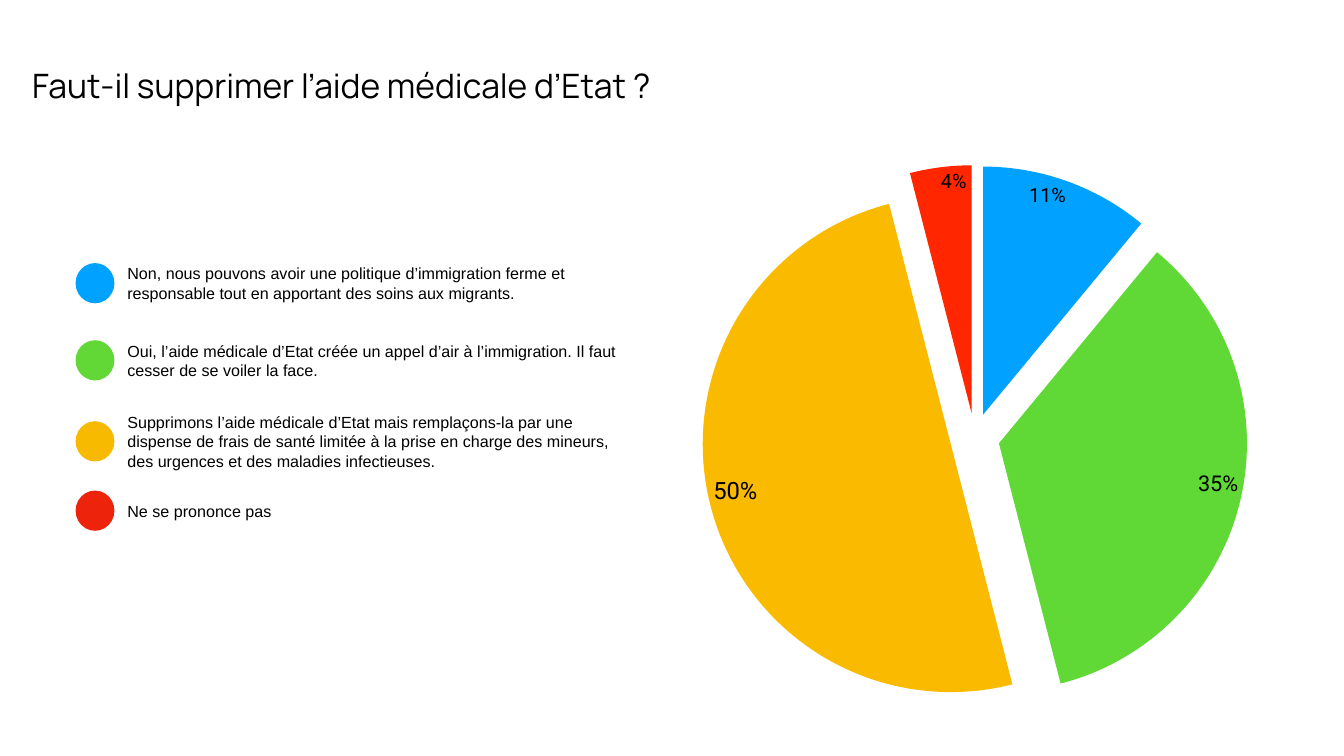
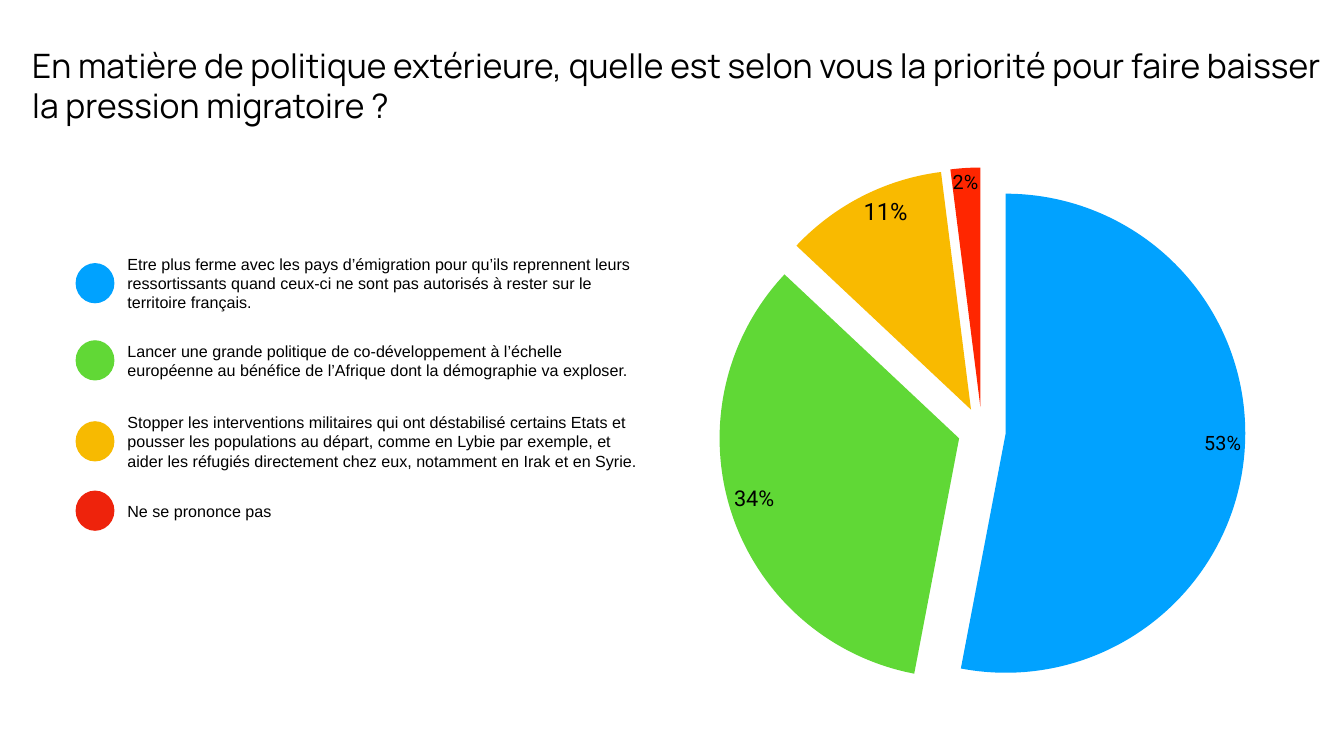
import copy

import pptx
import pptx.chart.data
import pptx.dml.color
import pptx.enum.chart
import pptx.enum.shapes
import pptx.enum.text
import pptx.oxml
import pptx.oxml.ns
import pptx.util

Pt = pptx.util.Pt
qn = pptx.oxml.ns.qn

COLOURS = {
    "text": "000000",
    "paper": "FFFFFF",
    "slices": ["01A2FF", "60D836", "F9BA00", "FF2600"],
    "dots": ["00A2FF", "61D836", "F7BA01", "EE230C"],
}
TITLE = {"name": "Manrope", "size": Pt(48)}
ANSWER = {"name": "Arial", "size": Pt(23)}
CHART_TEXT = {"name": "Arial", "size": Pt(10)}
LABEL_SIZES = [28.2, 31, 34, 28.2]
LABEL_SETTINGS = {
    "show_percentage": True,
    "show_value": False,
    "number_format": "#,##0%",
    "number_format_is_linked": False,
    "position": pptx.enum.chart.XL_LABEL_POSITION.INSIDE_END,
}
FRAME = {
    "word_wrap": True,
    "auto_size": pptx.enum.text.MSO_AUTO_SIZE.SHAPE_TO_FIT_TEXT,
    "vertical_anchor": pptx.enum.text.MSO_ANCHOR.MIDDLE,
    "margin_left": Pt(4),
    "margin_right": Pt(4),
    "margin_top": Pt(4),
    "margin_bottom": Pt(4),
}
ROW_CENTRES = [404.6, 514.8, 630.5, 729.6]
LINE_HEIGHT = 28
PLOT_LAYOUT = {"x": 0.005, "y": 0.005, "w": 0.99, "h": 0.988}

POLLS = [
    {
        "title": "Faut-il supprimer l’aide médicale d’Etat ?",
        "title_size": (1016, 75),
        "pie": (974, 232, 837, 789),
        "shares": [11, 35, 50, 4],
        "answers": [
            (2, "Non, nous pouvons avoir une politique d’immigration ferme et responsable "
                "tout en apportant des soins aux migrants."),
            (2, "Oui, l’aide médicale d’Etat créée un appel d’air à l’immigration. "
                "Il faut cesser de se voiler la face."),
            (3, "Supprimons l’aide médicale d’Etat mais remplaçons-la par une dispense de "
                "frais de santé limitée à la prise en charge des mineurs, des urgences et "
                "des maladies infectieuses."),
            (1, "Ne se prononce pas"),
        ],
    },
    {
        "title": "En matière de politique extérieure, quelle est selon vous la priorité "
                 "pour faire baisser la pression migratoire ?",
        "title_size": (1878, 147),
        "pie": (996, 235.5, 813.5, 762),
        "shares": [53, 34, 11, 2],
        "answers": [
            (3, "Etre plus ferme avec les pays d’émigration pour qu’ils reprennent leurs "
                "ressortissants quand ceux-ci ne sont pas autorisés à rester sur le "
                "territoire français."),
            (2, "Lancer une grande politique de co-développement à l’échelle européenne au "
                "bénéfice de l’Afrique dont la démographie va exploser."),
            (3, "Stopper les interventions militaires qui ont déstabilisé certains Etats et "
                "pousser les populations au départ, comme en Lybie par exemple, et aider les "
                "réfugiés directement chez eux, notamment en Irak et en Syrie."),
            (1, "Ne se prononce pas"),
        ],
    },
]


def apply(target, settings):
    for name, value in settings.items():
        setattr(target, name, value)


def chart_element(tag, **attributes):
    element = pptx.oxml.parse_xml(f"<c:{tag} {pptx.oxml.ns.nsdecls('c')}/>")
    for name, value in attributes.items():
        element.set(name, str(value))
    return element


class PollDeck:
    def __init__(self):
        self.deck = pptx.Presentation()
        apply(self.deck, {"slide_width": Pt(1920), "slide_height": Pt(1080)})
        self.page = None

    def add_page(self):
        self.page = self.deck.slides.add_slide(self.deck.slide_layouts[6])
        self.fill(self.page.background, COLOURS["paper"])

    def fill(self, target, colour):
        target.fill.solid()
        target.fill.fore_color.rgb = pptx.dml.color.RGBColor.from_string(colour)

    def font(self, font, style):
        apply(font, style)
        font.color.rgb = pptx.dml.color.RGBColor.from_string(COLOURS["text"])

    def text(self, words, left, centre, width, height, style):
        box = self.page.shapes.add_textbox(
            Pt(left), Pt(centre - height / 2), Pt(width), Pt(height))
        apply(box.text_frame, FRAME)
        span = box.text_frame.paragraphs[0].add_run()
        span.text = words
        self.font(span.font, style)

    def dot(self, centre, colour):
        width, height = 55.5, 57.5
        dot = self.page.shapes.add_shape(
            pptx.enum.shapes.MSO_SHAPE.OVAL,
            Pt(108), Pt(centre - height / 2), Pt(width), Pt(height))
        dot.shadow.inherit = False
        self.fill(dot, colour)
        dot.line.fill.background()

    def legend(self, answers):
        for centre, colour in zip(ROW_CENTRES, COLOURS["dots"]):
            self.dot(centre, colour)
        for centre, (lines, words) in zip(ROW_CENTRES, answers):
            self.text(words, 178, centre, 739, 7.5 + LINE_HEIGHT * lines, ANSWER)

    def pie(self, shares, place):
        data = pptx.chart.data.CategoryChartData()
        data.categories = [str(number + 1) for number in range(len(shares))]
        data.add_series("Series 1", shares)
        chart = self.page.shapes.add_chart(
            pptx.enum.chart.XL_CHART_TYPE.PIE, *map(Pt, place), data).chart
        apply(chart, {"has_title": False, "has_legend": False})
        self.font(chart.font, CHART_TEXT)
        plot = chart.plots[0]
        plot.vary_by_categories = False
        series = plot.series[0]
        self.fill(series.format, COLOURS["slices"][0])
        apply(series.data_labels, LABEL_SETTINGS)
        self.font(series.data_labels.font, {"name": "Roboto", "size": Pt(LABEL_SIZES[0])})
        for index, (colour, size) in enumerate(zip(COLOURS["slices"], LABEL_SIZES)):
            point = series.points[index]
            self.fill(point.format, colour)
            self.font(point.data_label.font, {"name": "Roboto", "size": Pt(size)})
            point.data_label.position = LABEL_SETTINGS["position"]
        self.finish_pie(chart.element)

    def finish_pie(self, root):
        series = next(root.iter(qn("c:ser")))
        series.find(qn("c:spPr")).addnext(chart_element("explosion", val=10))
        number_format = series.find(qn("c:dLbls")).find(qn("c:numFmt"))
        for label in series.iter(qn("c:dLbl")):
            label.find(qn("c:idx")).addnext(copy.deepcopy(number_format))
            label.find(qn("c:showVal")).set("val", "0")
            label.find(qn("c:showPercent")).set("val", "1")
        area = next(root.iter(qn("c:plotArea")))
        for automatic in area.findall(qn("c:layout")):
            area.remove(automatic)
        layout, manual = chart_element("layout"), chart_element("manualLayout")
        manual.append(chart_element("layoutTarget", val="inner"))
        for axis in "xy":
            manual.append(chart_element(f"{axis}Mode", val="edge"))
        for name, value in PLOT_LAYOUT.items():
            manual.append(chart_element(name, val=value))
        layout.append(manual)
        area.insert(0, layout)


def main():
    builder = PollDeck()
    for poll in POLLS:
        builder.add_page()
        builder.pie(poll["shares"], poll["pie"])
        builder.text(poll["title"], 42, 121.5, *poll["title_size"], TITLE)
        builder.legend(poll["answers"])
    builder.deck.save("out.pptx")


if __name__ == "__main__":
    main()
